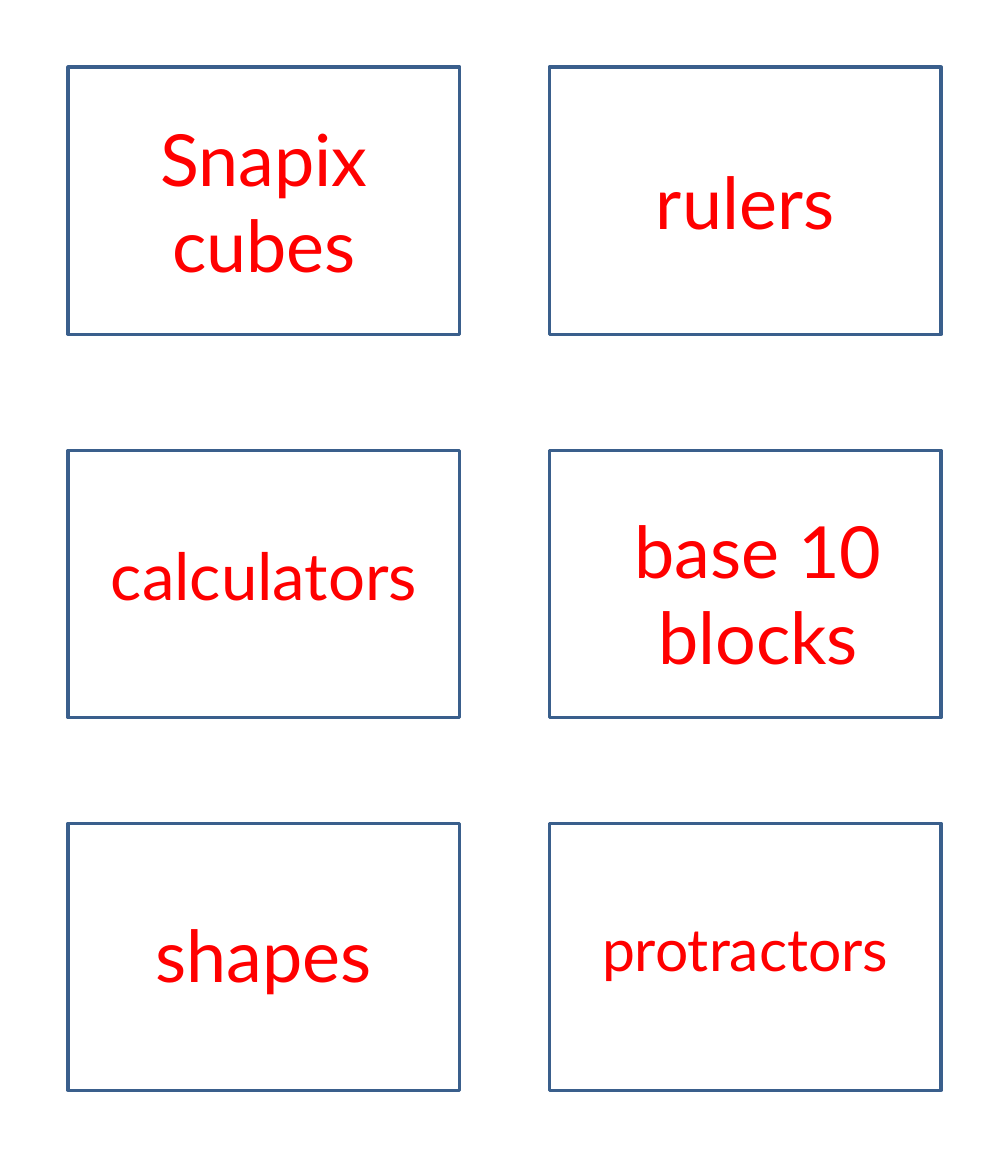
from pptx import Presentation
from pptx.dml.color import RGBColor
from pptx.enum.shapes import MSO_SHAPE
from pptx.enum.text import MSO_AUTO_SIZE, PP_ALIGN
from pptx.util import Cm, Pt

RECTANGLE = MSO_SHAPE.RECTANGLE
CENTER = PP_ALIGN.CENTER
FIT_TEXT = MSO_AUTO_SIZE.SHAPE_TO_FIT_TEXT

COLORS = {"card": "FFFFFF", "border": "3A5F8C", "word": "FF0000"}
CARD_LEFTS = (1.47, 11.86)
CARD_TOPS = (1.45, 9.73, 17.78)
CARD_WIDTH, CARD_HEIGHT = 8.46, 5.77

# Words, size, label width, shift from the card's centre across and down
LABELS = [
    (("Snapix", "cubes"), 44, 5.44, 0, 0),
    (("rulers",), 44, 5.54, 0, 0),
    (("calculators",), 40, 9.04, 0, -0.2),
    (("base 10", "blocks"), 44, 7.09, 0.28, 0.19),
    (("shapes",), 44, 6.22, 0, -0.06),
    (("protractors",), 36, 8.51, 0, -0.18),
]


def color(name):
    return RGBColor.from_string(COLORS[name])


def add_card(slide, left, top):
    card = slide.shapes.add_shape(
        RECTANGLE, Cm(left), Cm(top), Cm(CARD_WIDTH), Cm(CARD_HEIGHT))
    card.shadow.inherit = False
    card.fill.solid()
    card.fill.fore_color.rgb = color("card")
    card.line.color.rgb = color("border")
    card.line.width = Pt(2)


def add_label(slide, center_x, center_y, words, size, width):
    height = Pt(size * 1.2 * len(words)).cm + 0.25
    label = slide.shapes.add_textbox(
        Cm(center_x - width / 2), Cm(center_y - height / 2),
        Cm(width), Cm(height))
    frame = label.text_frame
    frame.word_wrap = False
    frame.auto_size = FIT_TEXT
    frame.text = "\n".join(words)
    for paragraph in frame.paragraphs:
        paragraph.alignment = CENTER
        font = paragraph.runs[0].font
        for attribute, value in {"name": "Lato", "size": Pt(size)}.items():
            setattr(font, attribute, value)
        font.color.rgb = color("word")


def main():
    deck = Presentation()
    deck.slide_width, deck.slide_height = Cm(21.59), Cm(25.4)
    slide = deck.slides.add_slide(deck.slide_layouts[6])
    for index, (words, size, width, across, down) in enumerate(LABELS):
        row, column = divmod(index, len(CARD_LEFTS))
        left, top = CARD_LEFTS[column], CARD_TOPS[row]
        add_card(slide, left, top)
        add_label(slide, left + CARD_WIDTH / 2 + across,
                  top + CARD_HEIGHT / 2 + down, words, size, width)
    deck.save("out.pptx")


if __name__ == "__main__":
    main()
